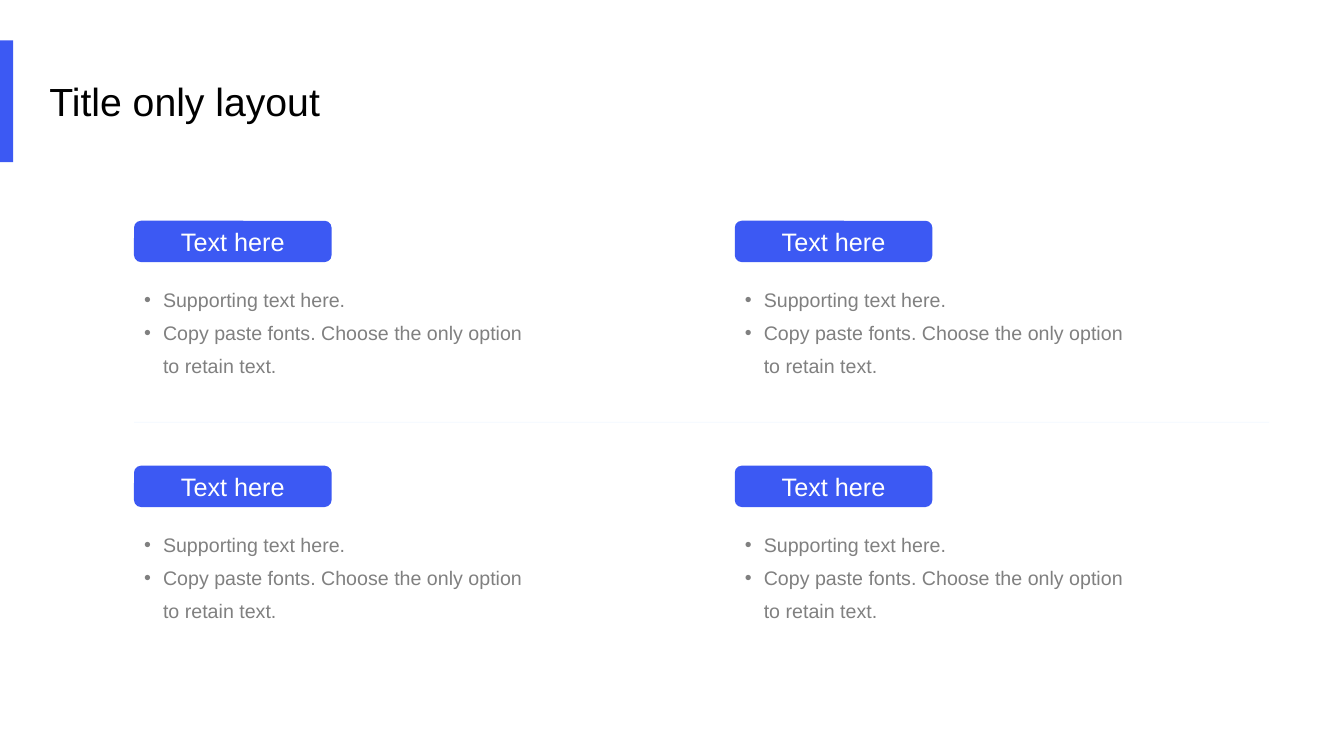
"""Build a title slide with a two by two grid of labelled bullet lists."""
from dataclasses import dataclass
from itertools import product

from lxml import etree
from pptx import Presentation
from pptx.dml.color import RGBColor
from pptx.enum.shapes import MSO_CONNECTOR, MSO_SHAPE
from pptx.enum.text import MSO_ANCHOR, MSO_AUTO_SIZE, PP_ALIGN
from pptx.oxml.ns import qn
from pptx.util import Pt

RECTANGLE, ROUNDED = MSO_SHAPE.RECTANGLE, MSO_SHAPE.ROUNDED_RECTANGLE
STRAIGHT = MSO_CONNECTOR.STRAIGHT
TOP, MIDDLE = MSO_ANCHOR.TOP, MSO_ANCHOR.MIDDLE
LEFT, CENTER = PP_ALIGN.LEFT, PP_ALIGN.CENTER
NO_AUTOFIT = MSO_AUTO_SIZE.NONE

TITLE = "Title only layout"
BULLETS = [
    "Supporting text here.",
    "Copy paste fonts. Choose the only option to retain text.",
]
TOPICS = [("Text here", BULLETS)] * 4

SLIDE_SIZE = (960, 540)
ACCENT_BOX = (0, 28.8, 9.36, 87.12)
TITLE_BOX = (28.08, 51.84, 252.72, 41.04)
GRID_LEFT, GRID_TOP = 95.76, 157.68
COLUMN_STEP, ROW_STEP = 429.12, 174.96
LABEL_SIZE = (141.12, 29.52)
LIST_SIZE = (300.24, 80.64)
LIST_DROP = 37.44
DIVIDER_RIGHT, DIVIDER_Y = 906.48, 301.68
BULLET_INDENT = 13.5
COMPARISON_LAYOUT = 4


@dataclass(frozen=True)
class Theme:
    """Colours, typeface and type sizes of the slide."""

    accent: str = "3C59F3"
    divider: str = "D9E8FF"
    title: str = "000000"
    label: str = "FFFFFF"
    body: str = "808080"
    font: str = "Arial"
    title_size: int = 28
    label_size: int = 18
    body_size: int = 14
    divider_width: float = 0.5
    divider_alpha: str = "33000"


THEME = Theme()
FRAME_FORMAT = {
    "margin_left": Pt(7.2),
    "margin_right": Pt(7.2),
    "margin_top": Pt(3.6),
    "margin_bottom": Pt(3.6),
    "word_wrap": True,
    "auto_size": NO_AUTOFIT,
}


def apply_format(target, values):
    """Set every named attribute on the target."""
    for attribute, value in values.items():
        setattr(target, attribute, value)


def place(holder, box):
    """Move and size a placeholder."""
    apply_format(holder, dict(zip(("left", "top", "width", "height"), map(Pt, box))))


def add_block(slide, outline, box):
    """Add a flat accent-coloured shape."""
    block = slide.shapes.add_shape(outline, *map(Pt, box))
    block.shadow.inherit = False
    block.fill.solid()
    block.fill.fore_color.rgb = RGBColor.from_string(THEME.accent)
    block.line.fill.background()
    return block


def write(holder, lines, size, color, alignment, anchor, spacing=1.0):
    """Fill a text frame with formatted paragraphs."""
    frame = holder.text_frame
    frame.text = "\n".join(lines)
    apply_format(frame, FRAME_FORMAT | {"vertical_anchor": anchor})
    for paragraph in frame.paragraphs:
        apply_format(paragraph, {
            "alignment": alignment,
            "line_spacing": spacing,
            "space_before": Pt(0),
            "space_after": Pt(0),
        })
        for run in paragraph.runs:
            apply_format(run.font, {"name": THEME.font, "size": Pt(size), "bold": False})
            run.font.color.rgb = RGBColor.from_string(color)


def add_bullets(holder):
    """Give each paragraph a hanging bullet."""
    for paragraph in holder.text_frame.paragraphs:
        properties = paragraph._p.get_or_add_pPr()
        properties.set("marL", str(Pt(BULLET_INDENT)))
        properties.set("indent", str(-Pt(BULLET_INDENT)))
        etree.SubElement(properties, qn("a:buFont"), typeface=THEME.font)
        etree.SubElement(properties, qn("a:buChar"), char="•")


def add_divider(slide):
    """Add the faint line between the two rows."""
    ends = (GRID_LEFT, DIVIDER_Y, DIVIDER_RIGHT, DIVIDER_Y)
    divider = slide.shapes.add_connector(STRAIGHT, *map(Pt, ends))
    divider.line.width = Pt(THEME.divider_width)
    divider.line.color.rgb = RGBColor.from_string(THEME.divider)
    properties = divider._element.spPr
    tint = properties.find(".//" + qn("a:srgbClr"))
    etree.SubElement(tint, qn("a:alpha"), val=THEME.divider_alpha)
    etree.SubElement(properties, qn("a:effectLst"))


def main():
    """Build and save the slide."""
    deck = Presentation()
    deck.slide_width, deck.slide_height = map(Pt, SLIDE_SIZE)
    slide = deck.slides.add_slide(deck.slide_layouts[COMPARISON_LAYOUT])
    title, *lists = list(slide.placeholders)[:5]

    add_block(slide, RECTANGLE, ACCENT_BOX)
    place(title, TITLE_BOX)
    write(title, [TITLE], THEME.title_size, THEME.title, LEFT, TOP)
    add_divider(slide)

    for (row, column), (heading, bullets), topic_list in zip(
        product(range(2), repeat=2), TOPICS, lists
    ):
        left = GRID_LEFT + column * COLUMN_STEP
        top = GRID_TOP + row * ROW_STEP
        label = add_block(slide, ROUNDED, (left, top, *LABEL_SIZE))
        write(label, [heading], THEME.label_size, THEME.label, CENTER, MIDDLE)
        place(topic_list, (left, top + LIST_DROP, *LIST_SIZE))
        write(topic_list, bullets, THEME.body_size, THEME.body, LEFT, TOP, 1.4)
        add_bullets(topic_list)

    deck.save("out.pptx")


if __name__ == "__main__":
    main()
